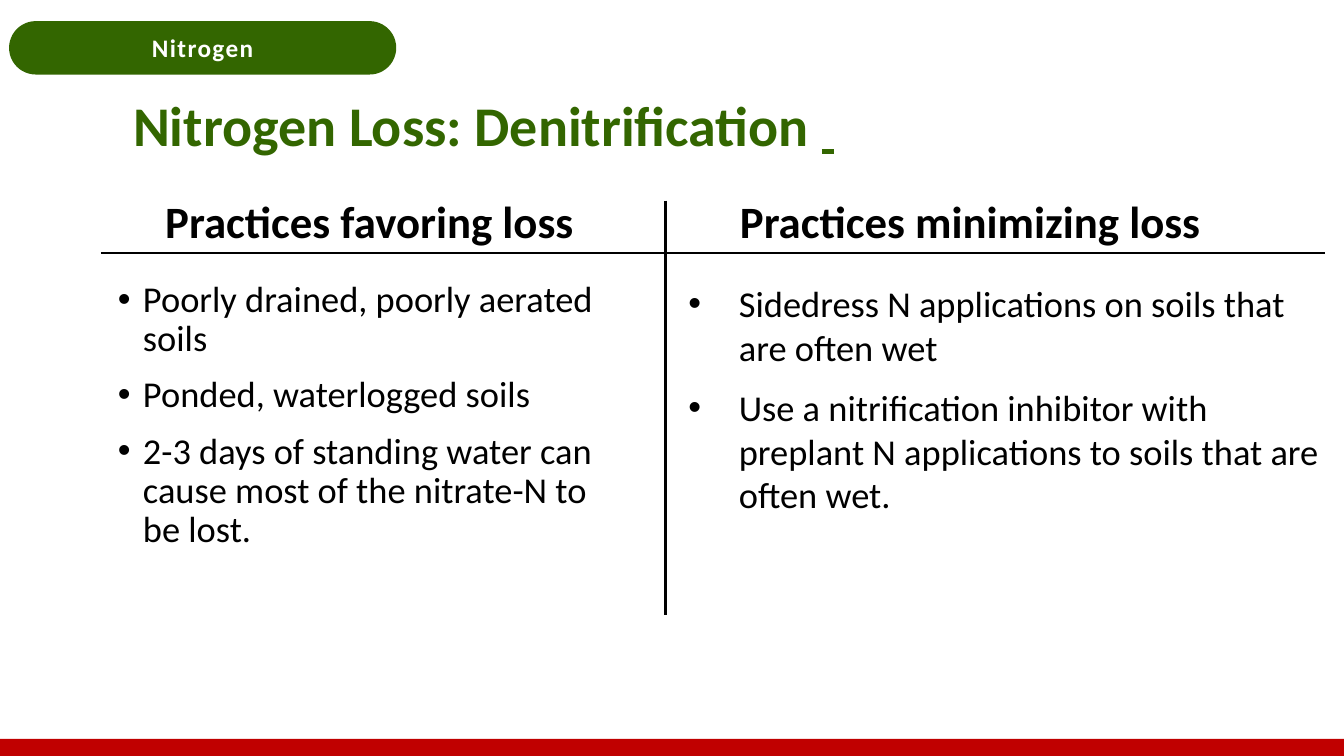
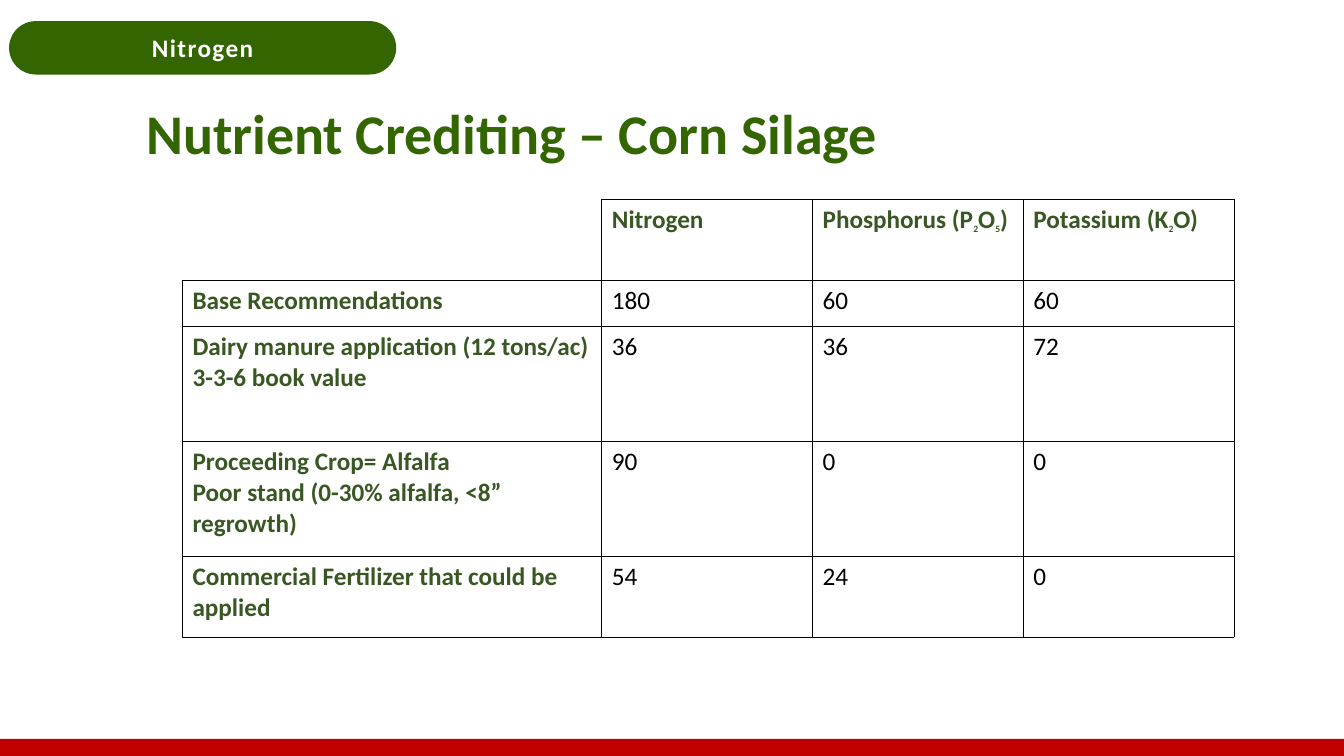
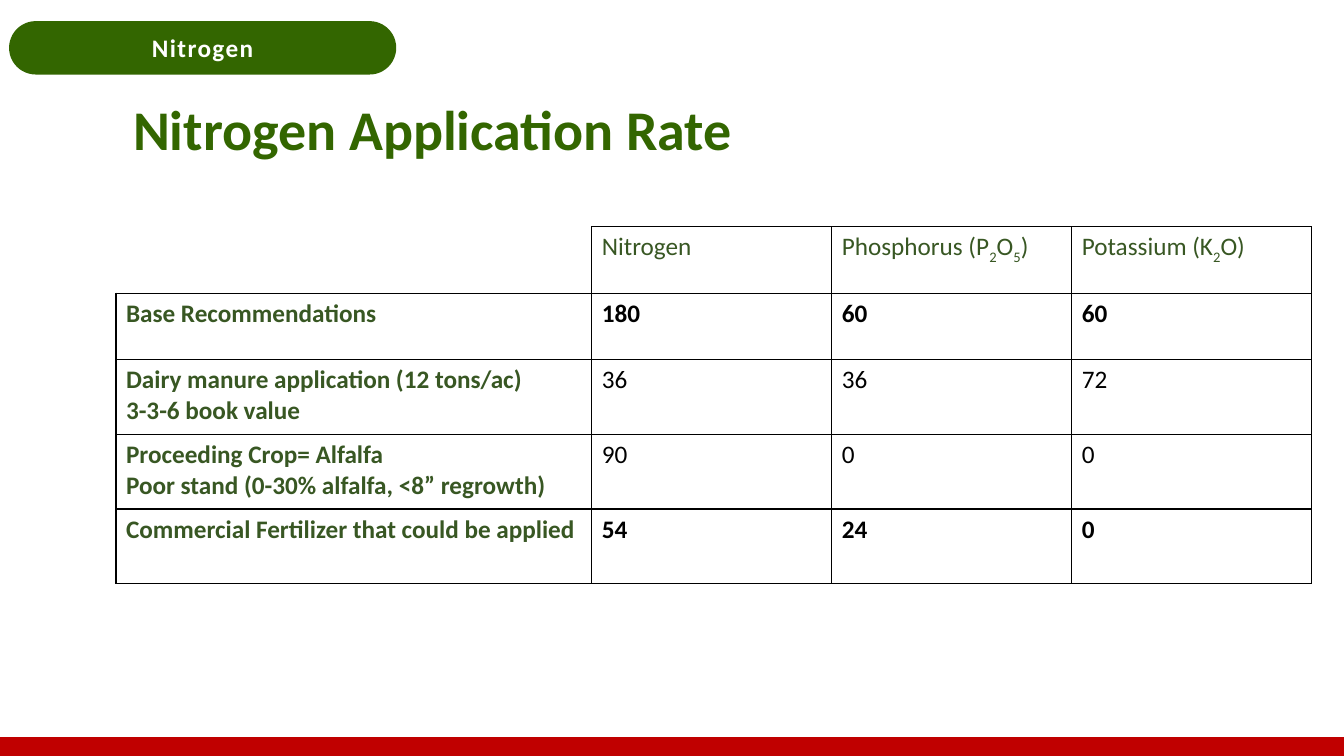
import pptx
import pptx.dml.color
import pptx.enum.shapes
import pptx.enum.text
import pptx.oxml
import pptx.oxml.ns
import pptx.util
from pptx.util import Inches

FONT = "Calibri"
GREEN, LABEL_GREEN, RED, BLACK, WHITE = "336600", "385723", "C00000", "000000", "FFFFFF"
SHAPE = pptx.enum.shapes.MSO_SHAPE
ALIGN = pptx.enum.text.PP_ALIGN
ANCHOR = pptx.enum.text.MSO_ANCHOR

HEADINGS = "Practices favoring loss\tPractices minimizing loss"
PRACTICES = [
    {"box": (1.07, 2.74, 5.3, 4.32), "indent": 0.25, "line_spacing": 0.9, "items": [
        "Poorly drained, poorly aerated soils",
        "Ponded, waterlogged soils",
        "2-3 days of standing water can cause most of the nitrate-N to be lost.",
    ]},
    {"box": (6.73, 2.74, 6.47, 2.46), "indent": 0.5, "line_spacing": 1.0, "items": [
        "Sidedress N applications on soils that are often wet",
        "Use a nitrification inhibitor with preplant N applications to soils that are often wet.",
    ]},
]
DIVIDERS = [(1, 2.51, 13.14, 2.51), (6.6, 1.99, 6.6, 6.1)]

NUTRIENTS = [
    ("Nitrogen",),
    ("Phosphorus (P", "2", "O", "5", ")"),
    ("Potassium (K", "2", "O)"),
]
CREDITS = [
    (["Base Recommendations"], (180, 60, 60)),
    (["Dairy manure application (12 tons/ac)", "3-3-6 book value"], (36, 36, 72)),
    (["Proceeding Crop= Alfalfa", "Poor stand (0-30% alfalfa, <8” regrowth)"], (90, 0, 0)),
    (["Commercial Fertilizer that could be applied"], (54, 24, 0)),
]
CREDITING = {
    "at": (1.81, 1.98), "columns": (4.16, 2.09), "rows": (0.8, 0.46, 1.14, 1.14, 0.8),
    "border": 0.75, "bold_header": True, "bold_rows": (), "subscript_size": 12,
    "keep_together": "be applied",
}
RATE = {
    "at": (1.15, 2.25), "columns": (4.72, 2.38), "rows": (0.66, 0.66, 0.74, 0.74, 0.74),
    "border": 1, "bold_header": False, "bold_rows": (1, 4), "subscript_size": 18,
    "keep_together": "",
}


def rgb(value):
    return pptx.dml.color.RGBColor.from_string(value)


def inches(values):
    return [Inches(value) for value in values]


def style(font, size, colour, bold=False):
    font.name = FONT
    font.size = pptx.util.Pt(size)
    font.bold = bold
    font.color.rgb = rgb(colour)


def add_child(parent, xml):
    child = pptx.oxml.parse_xml(xml.replace(">", f" {pptx.oxml.ns.nsdecls('a')}>", 1))
    parent.append(child)


def add_block(page, kind, box, colour):
    block = page.shapes.add_shape(kind, *inches(box))
    block.shadow.inherit = False
    block.fill.solid()
    block.fill.fore_color.rgb = rgb(colour)
    block.line.fill.background()
    return block


def add_text_box(page, box):
    frame = page.shapes.add_textbox(*inches(box)).text_frame
    frame.word_wrap = True
    return frame


def add_page(deck, title, top, left=1.22):
    page = deck.slides.add_slide(deck.slide_layouts[5])
    holder = page.shapes.title
    holder.left, holder.top, holder.width, holder.height = inches((left, top, 10.89, 1))
    frame = holder.text_frame
    frame.auto_size = pptx.enum.text.MSO_AUTO_SIZE.NONE
    frame.vertical_anchor = ANCHOR.MIDDLE
    para = frame.paragraphs[0]
    para.text = title
    para.alignment = ALIGN.LEFT
    para.line_spacing = 0.9
    style(para.font, 40, GREEN, True)
    return page


def furnish_layout(deck, page):
    band = add_block(page, SHAPE.RECTANGLE, (0, 7.33, 13.33, 0.17), RED)
    pill = add_block(page, SHAPE.ROUNDED_RECTANGLE, (0.09, 0.21, 3.84, 0.53), GREEN)
    pill.adjustments[0] = 0.5
    pill.text_frame.vertical_anchor = ANCHOR.MIDDLE
    para = pill.text_frame.paragraphs[0]
    para.alignment = ALIGN.CENTER
    span = para.add_run()
    span.text = "Nitrogen"
    style(span.font, 18, WHITE, True)
    span._r.get_or_add_rPr().set("spc", "100")
    layout_tree = deck.slide_layouts[5].shapes.element
    for number, shape in enumerate((band, pill), 20):
        shape.element.nvSpPr.cNvPr.set("id", str(number))
        layout_tree.append(shape.element)


def add_practices(page):
    for column in PRACTICES:
        frame = add_text_box(page, column["box"])
        for index, item in enumerate(column["items"]):
            para = frame.add_paragraph() if index else frame.paragraphs[0]
            para.text = item
            para.line_spacing = column["line_spacing"]
            para.space_after = pptx.util.Pt(12)
            properties = para._p.get_or_add_pPr()
            indent = Inches(column["indent"])
            properties.set("marL", str(indent))
            properties.set("indent", str(-indent))
            add_child(properties, '<a:buFont typeface="Arial"></a:buFont>')
            add_child(properties, '<a:buChar char="•"></a:buChar>')
            style(para.font, 26, BLACK)

    for ends in DIVIDERS:
        divider = page.shapes.add_connector(
            pptx.enum.shapes.MSO_CONNECTOR.STRAIGHT, *inches(ends))
        divider.line.color.rgb = rgb(BLACK)
        divider.line.width = pptx.util.Pt(1.5)
        add_child(divider.element.spPr, "<a:effectLst></a:effectLst>")

    para = add_text_box(page, (1.54, 1.87, 11.38, 0.64)).paragraphs[0]
    para.text = HEADINGS
    add_child(para._p.get_or_add_pPr(),
              f'<a:tabLst><a:tab pos="{Inches(5.7)}" algn="l"/></a:tabLst>')
    style(para.font, 32, BLACK, True)


def set_borders(cell, width, is_corner):
    properties = cell._tc.get_or_add_tcPr()
    for side in "LRTB":
        hidden = is_corner and side in "LT"
        paint = "<a:noFill/>" if hidden else (
            f'<a:solidFill><a:srgbClr val="{BLACK}"/></a:solidFill>')
        add_child(properties,
                  f'<a:ln{side} w="{pptx.util.Pt(width)}">{paint}</a:ln{side}>')


def fill_cell(cell, lines, colour, bold, subscript_size):
    for index, parts in enumerate(lines):
        para = cell.text_frame.add_paragraph() if index else cell.text_frame.paragraphs[0]
        style(para.font, 18, colour, bold)
        for position, part in enumerate(parts):
            span = para.add_run()
            span.text = part
            is_subscript = position % 2 == 1
            style(span.font, subscript_size if is_subscript else 18, colour, bold)
            if is_subscript:
                span._r.get_or_add_rPr().set("baseline", "-25000")


def add_credit_table(page, look):
    label_width, value_width = look["columns"]
    widths = [label_width] + [value_width] * len(NUTRIENTS)
    heights = look["rows"]
    table = page.shapes.add_table(
        len(heights), len(widths),
        *inches((*look["at"], sum(widths), sum(heights)))).table
    table.first_row = table.horz_banding = False
    for column, width in zip(table.columns, widths):
        column.width = Inches(width)
    for row, height in zip(table.rows, heights):
        row.height = Inches(height)

    size = look["subscript_size"]
    for column, parts in enumerate(NUTRIENTS, 1):
        fill_cell(table.cell(0, column), [parts], LABEL_GREEN, look["bold_header"], size)
    for row, (labels, values) in enumerate(CREDITS, 1):
        kept = look["keep_together"]
        if kept:
            labels = [label.replace(kept, kept.replace(" ", " ")) for label in labels]
        fill_cell(table.cell(row, 0), [(label,) for label in labels], LABEL_GREEN, True, size)
        for column, value in enumerate(values, 1):
            fill_cell(table.cell(row, column), [(str(value),)], BLACK,
                      row in look["bold_rows"], size)
    for index, cell in enumerate(table.iter_cells()):
        set_borders(cell, look["border"], index == 0)
        cell.fill.background()


def main():
    deck = pptx.Presentation()
    deck.slide_width, deck.slide_height = inches((13.33, 7.5))

    loss = add_page(deck, "Nitrogen Loss: Denitrification ", 0.77)
    furnish_layout(deck, loss)
    underlined = loss.shapes.title.text_frame.paragraphs[0].add_run()
    underlined.text = " "
    underlined.font.underline = True
    add_practices(loss)

    crediting = add_page(deck, "Nutrient Crediting – Corn Silage", 0.85, 1.35)
    add_credit_table(crediting, CREDITING)

    rate = add_page(deck, "Nitrogen Application Rate", 0.81)
    band = add_block(rate, SHAPE.RECTANGLE, (0, 7.32, 13.33, 0.18), RED)
    band.line.color.rgb = rgb(RED)
    band.line.width = pptx.util.Pt(1)
    add_credit_table(rate, RATE)

    deck.save("out.pptx")


if __name__ == "__main__":
    main()
